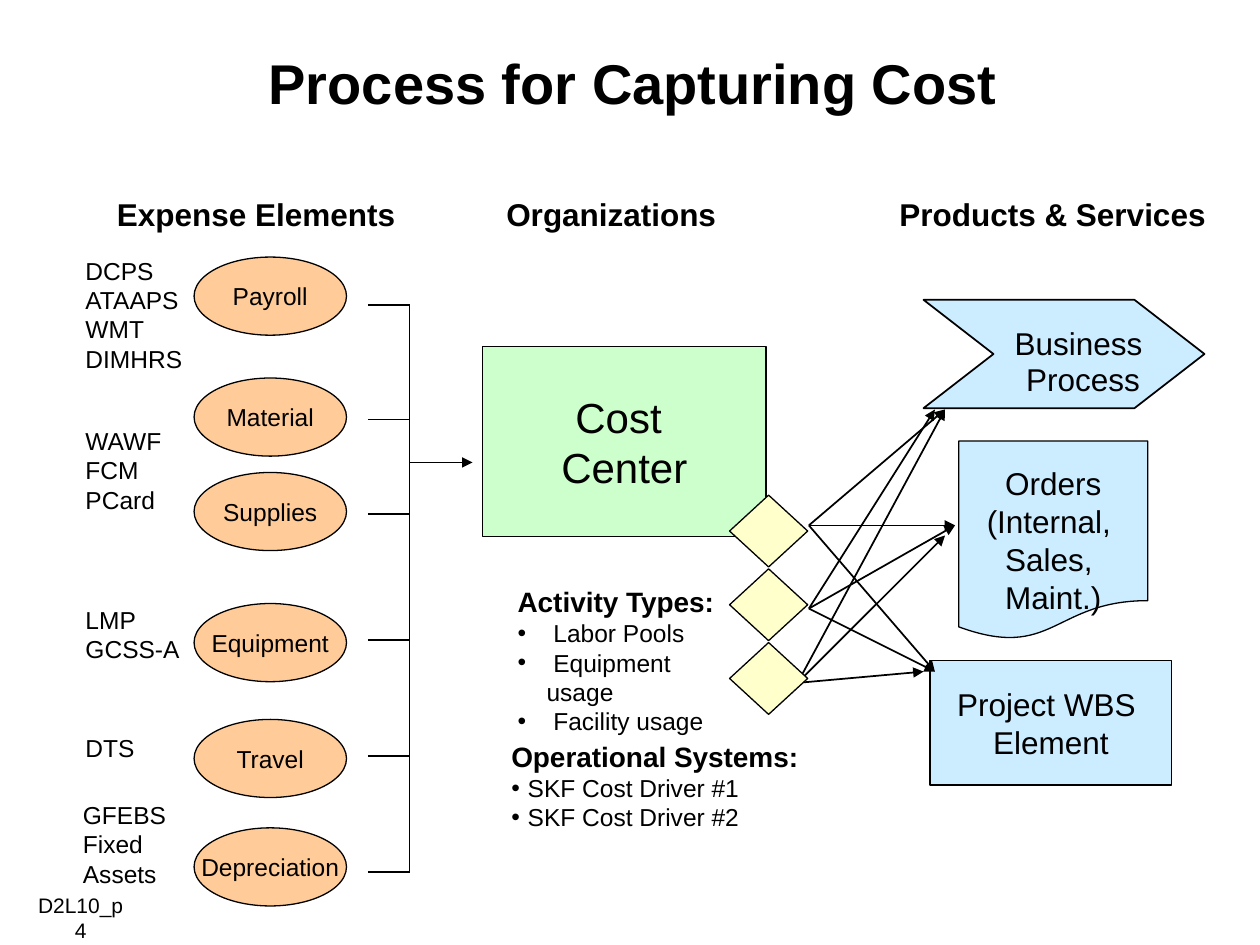
from lxml import etree
from pptx import Presentation
from pptx.dml.color import RGBColor
from pptx.enum.shapes import MSO_CONNECTOR, MSO_SHAPE
from pptx.enum.text import MSO_ANCHOR, PP_ALIGN
from pptx.oxml.ns import qn
from pptx.util import Inches, Pt

LEFT, CENTER = PP_ALIGN.LEFT, PP_ALIGN.CENTER
TOP, MIDDLE = MSO_ANCHOR.TOP, MSO_ANCHOR.MIDDLE
STRAIGHT = MSO_CONNECTOR.STRAIGHT
FONT = "Arial"
COLORS = {"ink": "000000", "expense": "FFCC99", "organization": "CCFFCC",
          "product": "CCECFF", "activity": "FFFFCC"}

TITLE = "Process for Capturing Cost"
HEADINGS = [("Expense Elements", 0.83, 2.41), ("Organizations", 3.92, 1.87),
            ("Products & Services", 7.04, 2.63)]
# name, top of the ellipse, height of its bracket branch
EXPENSES = [("Payroll", 2.04, 2.42), ("Material", 3, 3.33), ("Supplies", 3.75, 4.08),
            ("Equipment", 4.79, 5.08), ("Travel", 5.71, 6), ("Depreciation", 6.57, 6.92)]
# lines, left, top, width, height
SOURCE_SYSTEMS = [
    (["DCPS", "ATAAPS", "WMT", "DIMHRS"], 0.58, 1.98, 0.97, 1.03),
    (["WAWF", "FCM", "PCard"], 0.58, 3.33, 0.82, 0.8),
    (["LMP", "GCSS-A"], 0.58, 4.75, 0.95, 0.8),
    (["DTS"], 0.58, 5.77, 0.59, 0.57),
    (["GFEBS Fixed Assets"], 0.56, 6.3, 0.9, 1.03),
]
# heading, bullets, box, bullet indent
LISTS = [
    ("Activity Types:", [" Labor Pools", " Equipment usage", " Facility usage"],
     (4.01, 4.59, 1.83, 1.07), 0.23),
    ("Operational Systems:", ["SKF Cost Driver #1", "SKF Cost Driver #2"],
     (3.96, 5.82, 2.54, 0.83), 0.13),
]
BRACKET_LEFT, BRACKET_RIGHT = 2.92, 3.25
# start of each activity's arrows and their ends
ACTIVITY_ARROWS = [
    ((6.42, 4.17), [(7.5, 3.25), (7.58, 4.17), (7.42, 5.33)]),
    ((6.42, 4.83), [(7.42, 3.25), (7.58, 4.17), (7.42, 5.33)]),
    ((6.33, 5.42), [(7.5, 3.25), (7.5, 4.25), (7.33, 5.33)]),
]
ACTIVITY_TOP, ACTIVITY_STEP = 3.93, 0.585


def color(name):
    return RGBColor.from_string(COLORS[name])


def add_bullet(paragraph, indent):
    properties = paragraph._p.get_or_add_pPr()
    properties.set("marL", str(Inches(indent)))
    properties.set("indent", str(-Inches(indent)))
    etree.SubElement(properties, qn("a:buFont"), typeface=FONT)
    etree.SubElement(properties, qn("a:buChar"), char="•")


def write_text(shape, lines, size=14, bold=False, align=LEFT, anchor=TOP, wrap=True,
               insets=(0.1, 0.05, 0.1, 0.05), spacing=None, after=0,
               heading_size=None, indent=None):
    """Fill a shape with paragraphs; heading_size makes the first a bold heading."""
    frame = shape.text_frame
    frame.word_wrap = wrap
    frame.vertical_anchor = anchor
    (frame.margin_left, frame.margin_top,
     frame.margin_right, frame.margin_bottom) = map(Inches, insets)
    for index, line in enumerate(lines):
        paragraph = frame.add_paragraph() if index else frame.paragraphs[0]
        is_heading = heading_size is not None and index == 0
        paragraph.alignment = align
        paragraph.space_before = Pt(0)
        paragraph.space_after = Pt(after)
        if spacing:
            paragraph.line_spacing = spacing
        if indent and not is_heading:
            add_bullet(paragraph, indent)
        run = paragraph.add_run()
        run.text = line
        run.font.name = FONT
        run.font.size = Pt(heading_size if is_heading else size)
        run.font.bold = bold or is_heading
        run.font.color.rgb = color("ink")


def add_text(slide, box, lines, **text_format):
    write_text(slide.shapes.add_textbox(*map(Inches, box)), lines, **text_format)


def add_box(slide, preset, box, fill, lines=(), line_width=0.75, **text_format):
    shape = slide.shapes.add_shape(preset, *map(Inches, box))
    shape.shadow.inherit = False
    shape.fill.solid()
    shape.fill.fore_color.rgb = color(fill)
    shape.line.color.rgb = color("ink")
    shape.line.width = Pt(line_width)
    if lines:
        write_text(shape, lines, align=CENTER, anchor=MIDDLE, wrap=False, **text_format)
    return shape


def add_line(slide, start, end, arrow=False):
    connector = slide.shapes.add_connector(STRAIGHT, *map(Inches, (*start, *end)))
    connector.line.color.rgb = color("ink")
    connector.line.width = Pt(1)
    if arrow:
        etree.SubElement(connector.line._get_or_add_ln(), qn("a:tailEnd"), type="triangle")
    etree.SubElement(connector._element.spPr, qn("a:effectLst"))


def add_expenses(slide):
    for name, top, _ in EXPENSES:
        add_box(slide, MSO_SHAPE.OVAL, (1.54, top, 1.21, 0.62), "expense", [name])
    for lines, *box in SOURCE_SYSTEMS:
        add_text(slide, box, lines)
    branches = [branch for _, _, branch in EXPENSES]
    add_line(slide, (BRACKET_RIGHT, branches[0]), (BRACKET_RIGHT, branches[-1]))
    for branch in branches:
        add_line(slide, (BRACKET_LEFT, branch), (BRACKET_RIGHT, branch))
    add_line(slide, (BRACKET_RIGHT, 3.67), (3.75, 3.67), arrow=True)


def add_products(slide):
    chevron = add_box(slide, MSO_SHAPE.CHEVRON, (7.33, 2.38, 2.23, 0.86), "product",
                      ["Business ", "Process"], line_width=1, size=18, spacing=0.85,
                      after=2, insets=(0.4, 0.21, 0.1, 0.05))
    chevron.adjustments[0] = 0.646
    add_box(slide, MSO_SHAPE.FLOWCHART_DOCUMENT, (7.61, 3.5, 1.5, 1.58), "product",
            ["Orders", "(Internal, ", "Sales, ", "Maint.)"], size=18,
            insets=(0.1, 0.35, 0.1, 0.05))
    add_box(slide, MSO_SHAPE.RECTANGLE, (7.38, 5.24, 1.92, 0.99), "product",
            ["Project WBS ", "Element"], size=18)


def add_activities(slide):
    for start, ends in ACTIVITY_ARROWS:
        for end in ends:
            add_line(slide, start, end, arrow=True)
    for row in range(len(ACTIVITY_ARROWS)):
        add_box(slide, MSO_SHAPE.DIAMOND,
                (5.79, ACTIVITY_TOP + row * ACTIVITY_STEP, 0.62, 0.57), "activity")
    for heading, bullets, box, indent in LISTS:
        add_text(slide, box, [heading, *bullets], heading_size=16, indent=indent)


def main():
    presentation = Presentation()
    presentation.slide_width, presentation.slide_height = Inches(10), Inches(7.5)
    slide = presentation.slides.add_slide(presentation.slide_layouts[5])
    title = slide.shapes.title
    title.left, title.top, title.width, title.height = map(Inches, (1.36, 0.21, 7.33, 0.88))
    write_text(title, [TITLE], size=32, bold=True, align=CENTER, anchor=MIDDLE)
    for heading, left, width in HEADINGS:
        add_text(slide, (left, 1.5, width, 0.4), [heading], size=18, bold=True, wrap=False)
    add_box(slide, MSO_SHAPE.RECTANGLE, (3.83, 2.75, 2.25, 1.51), "organization",
            ["Cost ", "Center"], size=24)
    add_expenses(slide)
    add_products(slide)
    add_activities(slide)
    add_text(slide, (0.2, 7.08, 0.88, 0.2), ["D2L10_p4"], size=12, align=CENTER,
             insets=(0.1, 0, 0.1, 0))
    presentation.save("out.pptx")


if __name__ == "__main__":
    main()
